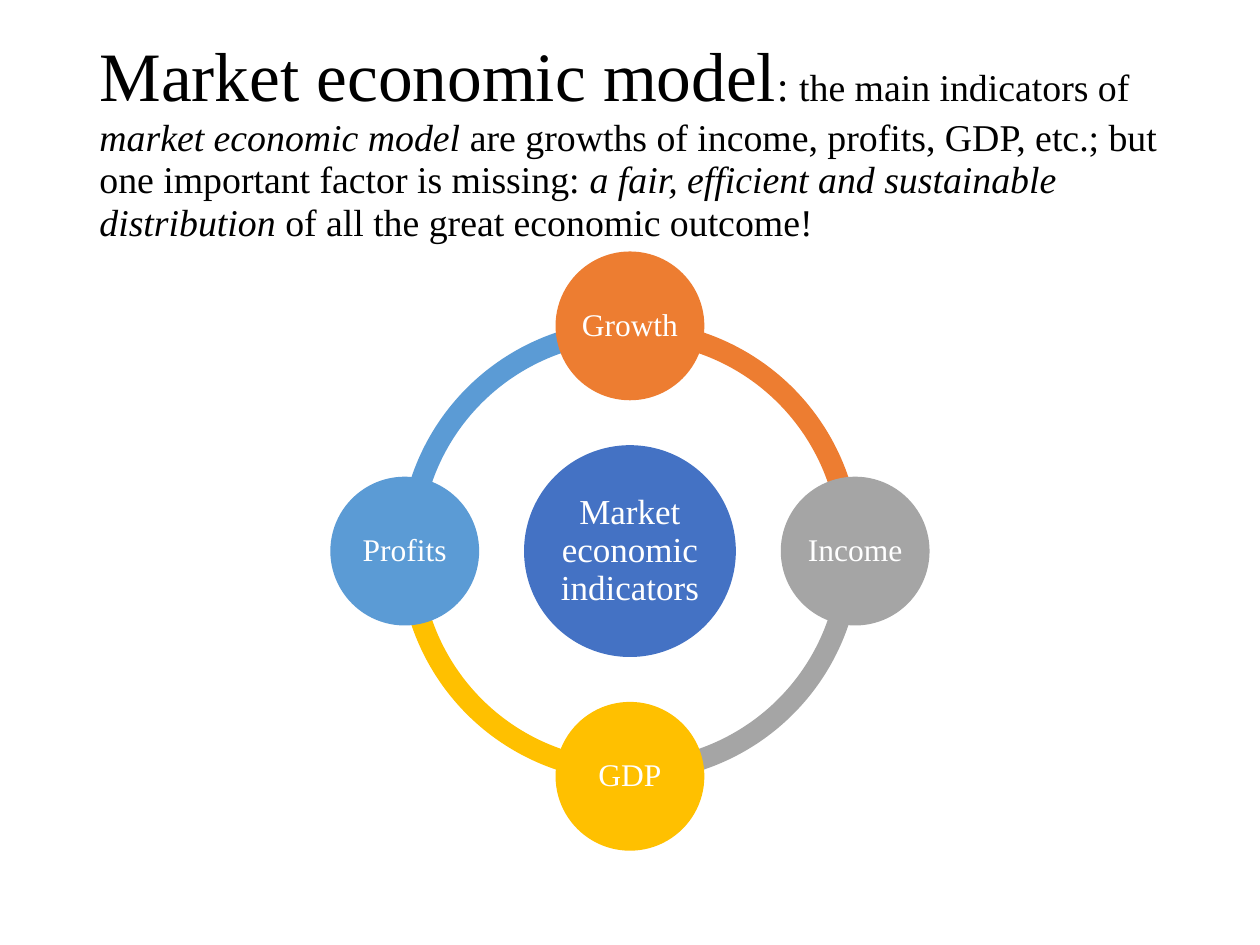
import math
import pptx
import pptx.dml.color
import pptx.enum.shapes
import pptx.enum.text
import pptx.util

Cm = pptx.util.Cm
RGB = pptx.dml.color.RGBColor
Shape = pptx.enum.shapes.MSO_SHAPE
Align = pptx.enum.text.PP_ALIGN
Anchor = pptx.enum.text.MSO_ANCHOR

BLACK = RGB(0x00, 0x00, 0x00)
WHITE = RGB(0xFF, 0xFF, 0xFF)
NAVY = RGB(0x44, 0x72, 0xC4)
ORANGE = RGB(0xED, 0x7D, 0x31)
GREY = RGB(0xA5, 0xA5, 0xA5)
GOLD = RGB(0xFF, 0xC0, 0x00)
BLUE = RGB(0x5B, 0x9B, 0xD5)

HEAD = [
    ("Market economic model", 39.6, False),
    (": ", 24.3, False),
    ("the main indicators of ", 21.6, False),
    ("market economic model ", 21.6, True),
    ("are growths of income, profits, GDP, etc.; but one important factor "
     "is missing: ", 21.6, False),
    ("a fair, efficient and sustainable distribution", 21.6, True),
    (" of all the great economic outcome!", 21.6, False),
]
NODES = [("Growth", ORANGE), ("Income", GREY), ("GDP", GOLD), ("Profits", BLUE)]


def write(para, text, size=18, color=WHITE, italic=False):
    run = para.add_run()
    run.text = text
    run.font.name = "Times New Roman"
    run.font.size = pptx.util.Pt(size)
    run.font.color.rgb = color
    run.font.italic = italic


def title(slide, left, top, width, height):
    shape = slide.shapes.title
    shape.left, shape.top = Cm(left), Cm(top)
    shape.width, shape.height = Cm(width), Cm(height)
    frame = shape.text_frame
    frame.word_wrap = True
    frame.auto_size = pptx.enum.text.MSO_AUTO_SIZE.NONE
    frame.vertical_anchor = Anchor.MIDDLE
    para = frame.paragraphs[0]
    para.alignment = Align.LEFT
    para.line_spacing = 0.94
    for text, size, italic in HEAD:
        write(para, text, size=size, color=BLACK, italic=italic)


def round_shape(slide, kind, x, y, size, color):
    shape = slide.shapes.add_shape(
        kind, Cm(x - size / 2), Cm(y - size / 2), Cm(size), Cm(size))
    shape.shadow.inherit = False
    shape.fill.solid()
    shape.fill.fore_color.rgb = color
    shape.line.fill.background()
    return shape


def disc(slide, x, y, size, color, text, points):
    frame = round_shape(slide, Shape.OVAL, x, y, size, color).text_frame
    frame.word_wrap = True
    frame.vertical_anchor = Anchor.MIDDLE
    frame.margin_left = frame.margin_right = Cm(0.08)
    frame.margin_top = frame.margin_bottom = Cm(0.08)
    para = frame.paragraphs[0]
    para.alignment = Align.CENTER
    para.line_spacing = 0.9
    write(para, text, size=points)


def cycle(slide, left, top, size):
    x, y = left + size / 2, top + size / 2
    node, ring, core = 3, 9.3, 4.27
    reach = (size - node) / 2
    step = 360 / len(NODES)
    for i, (text, color) in reversed(list(enumerate(NODES))):
        arc = round_shape(slide, Shape.BLOCK_ARC, x, y, ring, color)
        start = (i * step - 90) % 360
        arc.adjustments[0] = start * 0.6
        arc.adjustments[1] = (start + step) % 360 * 0.6
        arc.adjustments[2] = 0.046
    disc(slide, x, y, core, NAVY, "Market economic indicators", 20)
    for i, (text, color) in enumerate(NODES):
        turn = math.radians(i * step - 90)
        disc(slide, x + reach * math.cos(turn), y + reach * math.sin(turn),
             node, color, text, 18)


def main():
    deck = pptx.Presentation()
    deck.slide_width, deck.slide_height = Cm(25.4), Cm(19.05)
    slide = deck.slides.add_slide(deck.slide_layouts[5])
    title(slide, 1.75, 1.02, 21.9, 3.68)
    cycle(slide, 6.66, 5.07, 12.08)
    deck.save("out.pptx")


if __name__ == "__main__":
    main()
